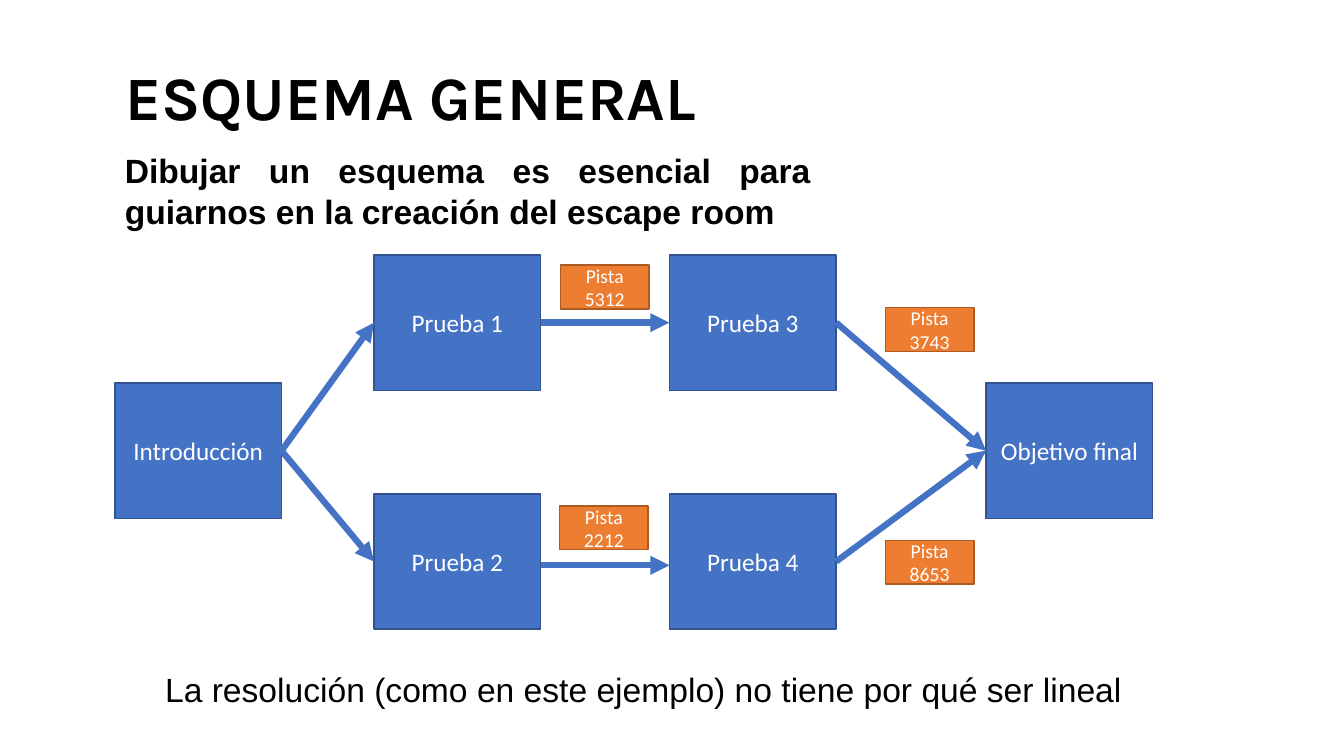
from lxml.etree import SubElement
from pptx import Presentation
from pptx.dml.color import RGBColor
from pptx.enum.shapes import MSO_CONNECTOR as Link, MSO_SHAPE as Form
from pptx.enum.text import MSO_ANCHOR as Anchor, MSO_AUTO_SIZE as Fit, PP_ALIGN as Align
from pptx.oxml.ns import qn
from pptx.util import Inches, Pt

BLACK = RGBColor(0x00, 0x00, 0x00)
WHITE = RGBColor(0xFF, 0xFF, 0xFF)
BLUE = RGBColor(0x44, 0x72, 0xC4)
NAVY = RGBColor(0x31, 0x53, 0x8F)
ORANGE = RGBColor(0xED, 0x7D, 0x31)
BROWN = RGBColor(0xAC, 0x5B, 0x23)

# Lengths are percentages of the slide's width and height.
COLS = (8.55, 27.83, 49.81, 73.37)
TOP, MID, LOW = 33.73, 50.67, 65.33
STEP = (12.4, 17.9)
CLUE = (6.6, 5.8)

STEPS = {
    "Introducción": (COLS[0], MID),
    "Prueba 1": (COLS[1], TOP),
    "Prueba 2": (COLS[1], LOW),
    "Prueba 3": (COLS[2], TOP),
    "Prueba 4": (COLS[2], LOW),
    "Objetivo final": (COLS[3], MID),
}
PATHS = (
    ("Introducción", "Prueba 1", 0),
    ("Introducción", "Prueba 2", 0),
    ("Prueba 1", "Prueba 3", 0),
    ("Prueba 2", "Prueba 4", 0.5),
    ("Prueba 4", "Objetivo final", 0),
    ("Prueba 3", "Objetivo final", 0),
)
CLUES = {
    "5312": (41.7, 35.07),
    "2212": (41.63, 66.93),
    "3743": (65.87, 40.67),
    "8653": (65.87, 71.47),
}


class Board:
    def __init__(self, deck):
        self.deck = deck
        self.slide = deck.slides.add_slide(deck.slide_layouts[5])
        self.shapes = self.slide.shapes

    def area(self, x, y, w, h):
        """Turn percentages of the slide into lengths."""
        wide, high = self.deck.slide_width, self.deck.slide_height
        return [round(part * full / 100)
                for part, full in ((x, wide), (y, high), (w, wide), (h, high))]

    def fill(self, frame, lines, face, size, color, align, bold=False):
        """Fill a frame with one paragraph, broken between the lines."""
        frame.word_wrap = True
        para = frame.paragraphs[0]
        para.alignment = align
        for i, line in enumerate(lines):
            if i:
                para.add_line_break()
            run = para.add_run()
            run.text = line
            font = run.font
            font.name, font.size, font.bold = face, Pt(size), bold
            font.color.rgb = color
        return para

    def title(self, text, *place):
        head = self.shapes.title
        head.left, head.top, head.width, head.height = self.area(*place)
        frame = head.text_frame
        frame.auto_size = Fit.NONE
        frame.vertical_anchor = Anchor.TOP
        para = self.fill(frame, [text], "Karla", 44, BLACK, Align.LEFT, True)
        para.line_spacing = 0.9

    def note(self, text, place, align=Align.LEFT, bold=False):
        frame = self.shapes.add_textbox(*self.area(*place)).text_frame
        frame.auto_size = Fit.SHAPE_TO_FIT_TEXT
        self.fill(frame, [text], "Arial", 24, BLACK, align, bold)

    def box(self, lines, spot, size, color, edge, points):
        box = self.shapes.add_shape(Form.RECTANGLE, *self.area(*spot, *size))
        box.shadow.inherit = False
        box.fill.solid()
        box.fill.fore_color.rgb = color
        box.line.color.rgb = edge
        box.line.width = Pt(1)
        box.text_frame.vertical_anchor = Anchor.MIDDLE
        self.fill(box.text_frame, lines, "Calibri", points, WHITE, Align.CENTER)
        return box

    def arrow(self, start, end, drop):
        """Join right side to left side; a drop lowers the line off centre."""
        shift = self.area(0, drop, 0, 0)[1]
        link = self.shapes.add_connector(
            Link.STRAIGHT,
            start.left + start.width, start.top + start.height // 2 + shift,
            end.left, end.top + end.height // 2 + shift)
        if not drop:
            link.begin_connect(start, 3)
            link.end_connect(end, 1)
        link.line.color.rgb = BLUE
        link.line.width = Pt(4.5)
        props = link.element.find(qn("p:spPr"))
        SubElement(props.find(qn("a:ln")), qn("a:tailEnd"), type="triangle")
        SubElement(props, qn("a:effectLst"))


def main():
    deck = Presentation()
    deck.slide_width, deck.slide_height = Inches(13.33), Inches(7.5)
    board = Board(deck)
    board.title("ESQUEMA GENERAL", COLS[0], 8.27, 82.75, 9.47)
    board.note("Dibujar un esquema es esencial para guiarnos en la creación del escape room",
               (COLS[0], 19.2, 52.5, 12.13), Align.JUSTIFY, True)
    board.note("La resolución (como en este ejemplo) no tiene por qué ser lineal",
               (11.55, 87.87, 83.2, 6.67))
    boxes = {name: board.box([name], spot, STEP, BLUE, NAVY, 18)
             for name, spot in STEPS.items()}
    for start, end, drop in PATHS:
        board.arrow(boxes[start], boxes[end], drop)
    for code, spot in CLUES.items():
        board.box(["Pista", code], spot, CLUE, ORANGE, BROWN, 14)
    deck.save("out.pptx")


if __name__ == "__main__":
    main()
